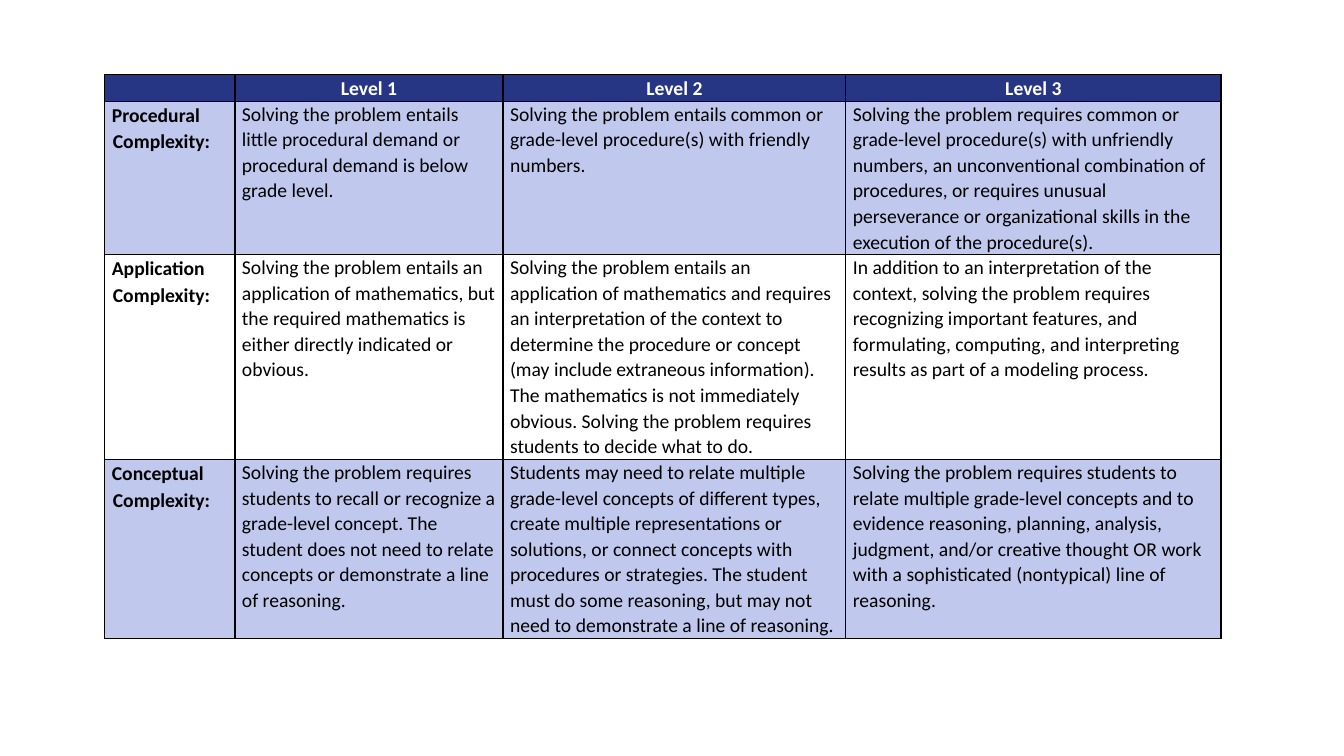
from lxml import etree
from pptx import Presentation
from pptx.dml.color import RGBColor
from pptx.enum.text import PP_ALIGN
from pptx.oxml.ns import qn
from pptx.util import Inches, Pt

CENTER, LEFT = PP_ALIGN.CENTER, PP_ALIGN.LEFT
NAVY = RGBColor(0x26, 0x36, 0x85)
LILAC = RGBColor(0xC1, 0xC8, 0xED)
BLACK = RGBColor(0, 0, 0)
WHITE = RGBColor(0xFF, 0xFF, 0xFF)

WIDTHS = [9.68, 19.95, 25.51, 27.91]
HEIGHTS = [3.4, 20.3, 27.1, 23.6]
FILLS = [NAVY, LILAC, None, LILAC]
ROWS = [
    ["", "Level 1", "Level 2", "Level 3"],
    [
        "Procedural Complexity:",
        "Solving the problem entails little procedural demand or procedural demand is below grade level.",
        "Solving the problem entails common or grade-level procedure(s) with friendly numbers.",
        "Solving the problem requires common or grade-level procedure(s) with unfriendly numbers, "
        "an unconventional combination of procedures, or requires unusual perseverance or "
        "organizational skills in the execution of the procedure(s).",
    ],
    [
        "Application Complexity:",
        "Solving the problem entails an application of mathematics, but the required mathematics "
        "is either directly indicated or obvious.",
        "Solving the problem entails an application of mathematics and requires an interpretation "
        "of the context to determine the procedure or concept (may include extraneous information). "
        "The mathematics is not immediately obvious. Solving the problem requires students to "
        "decide what to do.",
        "In addition to an interpretation of the context, solving the problem requires recognizing "
        "important features, and formulating, computing, and interpreting results as part of a "
        "modeling process.",
    ],
    [
        "Conceptual Complexity:",
        "Solving the problem requires students to recall or recognize a grade-level concept. "
        "The student does not need to relate concepts or demonstrate a line of reasoning.",
        "Students may need to relate multiple grade-level concepts of different types, create "
        "multiple representations or solutions, or connect concepts with procedures or strategies. "
        "The student must do some reasoning, but may not need to demonstrate a line of reasoning.",
        "Solving the problem requires students to relate multiple grade-level concepts and to "
        "evidence reasoning, planning, analysis, judgment, and/or creative thought OR work with a "
        "sophisticated (nontypical) line of reasoning.",
    ],
]


def apply(target, values):
    for name, value in values.items():
        setattr(target, name, value)


class Board:
    FONT = {"name": "Calibri", "size": Pt(14)}
    INSET = {
        "margin_left": Inches(0.07),
        "margin_right": Inches(0.07),
        "margin_top": 0,
        "margin_bottom": 0,
    }
    HEAD = {"alignment": CENTER, "line_spacing": 1.11}
    LABEL = {"alignment": LEFT, "line_spacing": 1.11}
    BODY = {"alignment": LEFT, "line_spacing": 1.07}

    def __init__(self, deck):
        self.wide, self.high = deck.slide_width, deck.slide_height
        self.slide = deck.slides.add_slide(deck.slide_layouts[6])

    def across(self, share):
        return round(self.wide * share / 100)

    def down(self, share):
        return round(self.high * share / 100)

    def table(self, left, top, widths, heights, rows, fills):
        frame = self.slide.shapes.add_table(
            len(rows), len(widths), self.across(left), self.down(top),
            self.across(sum(widths)), self.down(sum(heights)))
        grid = frame.table
        apply(grid, {"first_row": False, "horz_banding": False})
        for column, share in zip(grid.columns, widths):
            column.width = self.across(share)
        for line, share in zip(grid.rows, heights):
            line.height = self.down(share)
        for r, (texts, fill) in enumerate(zip(rows, fills)):
            for c, text in enumerate(texts):
                self.cell(grid.cell(r, c), text, fill, r == 0, c == 0)

    def cell(self, cell, text, fill, head, label):
        apply(cell, self.INSET)
        if fill is None:
            cell.fill.background()
        else:
            cell.fill.solid()
            cell.fill.fore_color.rgb = fill
        self.border(cell)
        para = cell.text_frame.paragraphs[0]
        apply(para, self.HEAD if head else self.LABEL if label else self.BODY)
        if not text:
            etree.SubElement(para._p, qn("a:endParaRPr"), sz="1400")
            return
        if label:
            hang = Inches(0.01)
            props = para._p.get_or_add_pPr()
            props.set("marL", str(hang))
            props.set("indent", str(-hang))
        run = para.add_run()
        run.text = text
        apply(run.font, {**self.FONT, "bold": head or label})
        run.font.color.rgb = WHITE if head else BLACK

    def border(self, cell):
        props = cell._tc.get_or_add_tcPr()
        for index, side in enumerate("LRTB"):
            line = etree.Element(qn(f"a:ln{side}"), w=str(Pt(1)))
            paint = etree.SubElement(line, qn("a:solidFill"))
            etree.SubElement(paint, qn("a:srgbClr"), val=str(BLACK))
            props.insert(index, line)


def main():
    deck = Presentation()
    apply(deck, {"slide_width": Inches(13.33), "slide_height": Inches(7.5)})
    Board(deck).table(7.8, 9.87, WIDTHS, HEIGHTS, ROWS, FILLS)
    deck.save("out.pptx")


if __name__ == "__main__":
    main()
